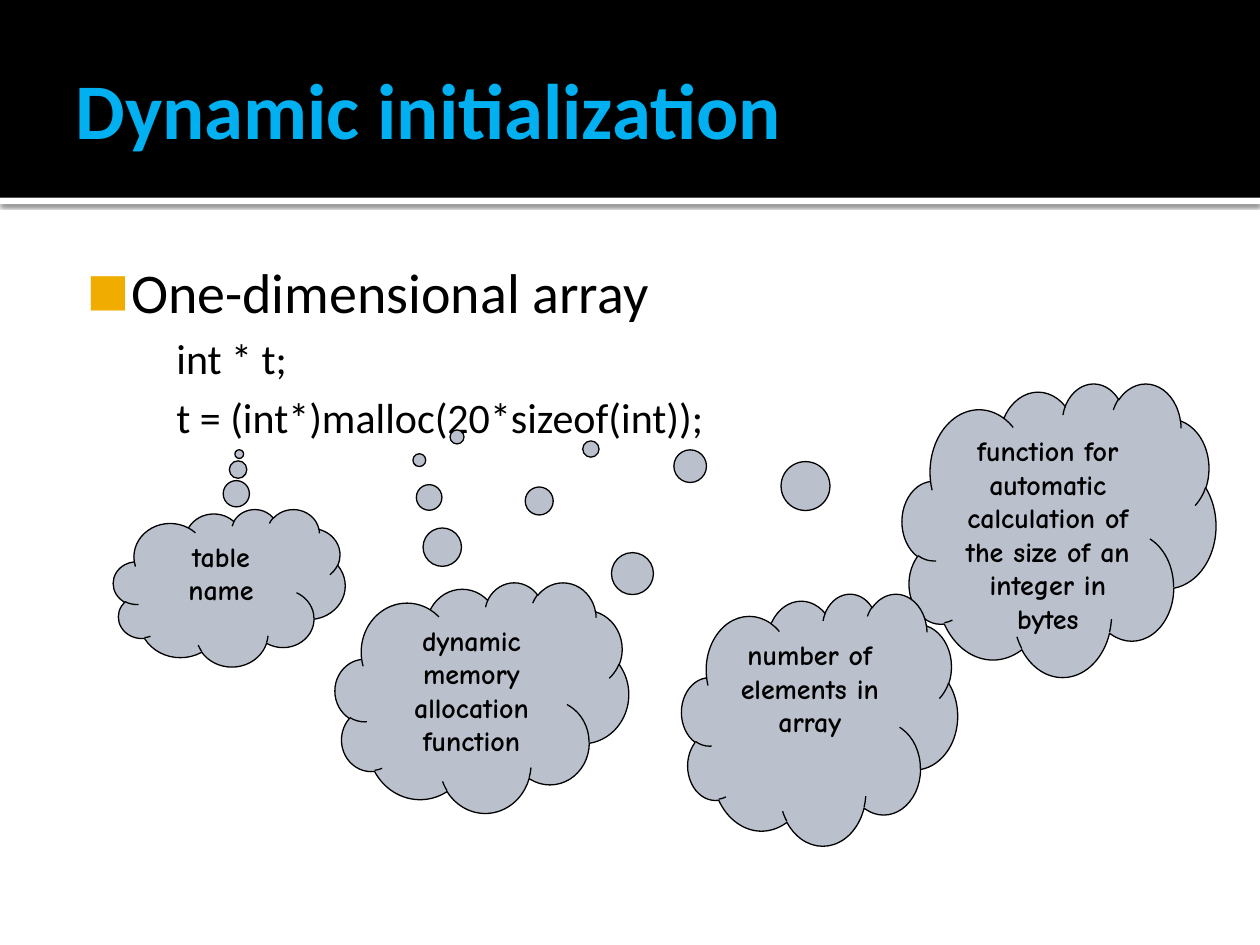
from lxml.etree import SubElement
from pptx import Presentation
from pptx.dml.color import RGBColor
from pptx.enum.shapes import MSO_SHAPE
from pptx.enum.text import MSO_ANCHOR, MSO_AUTO_SIZE, PP_ALIGN
from pptx.oxml import parse_xml
from pptx.oxml.ns import nsdecls, qn
from pptx.util import Inches, Pt

BLACK = RGBColor(0x00, 0x00, 0x00)
WHITE = RGBColor(0xFF, 0xFF, 0xFF)
SKY = RGBColor(0x00, 0xB0, 0xF0)
AMBER = RGBColor(0xF0, 0xAD, 0x00)
CLOUD = RGBColor(0xBA, 0xC0, 0xCC)


def write(p, text, size, font="Calibri", color=BLACK, bold=False, align=PP_ALIGN.LEFT):
    """Put one formatted run into a paragraph."""
    p.alignment = align
    r = p.add_run()
    r.text = text
    r.font.size, r.font.name, r.font.bold = Pt(size), font, bold
    r.font.color.rgb = color


class SlideBuilder:
    body_font = "Calibri"
    note_font = "Comic Neue"

    def __init__(self, prs):
        self.s = prs.slides.add_slide(prs.slide_layouts[1])

    def bar(self, top, height, color, shadow=False):
        """Full-width bar behind the placeholders."""
        sp = self.s.shapes.add_shape(
            MSO_SHAPE.RECTANGLE, 0, Inches(top), Inches(10), Inches(height))
        sp.shadow.inherit = False
        sp.fill.solid()
        sp.fill.fore_color.rgb = color
        sp.line.fill.background()
        if shadow:
            effects = sp._element.spPr.find(qn("a:effectLst"))
            effects.append(parse_xml(
                f'<a:outerShdw {nsdecls("a")} blurRad="{Pt(2.5)}" dist="{Pt(0.8)}" '
                'dir="5400000" algn="t" rotWithShape="0"><a:srgbClr val="000000">'
                '<a:alpha val="60000"/></a:srgbClr></a:outerShdw>'))
        self.s.shapes._spTree.insert(2, sp._element)

    def frame(self, sp, box, insets, anchor):
        """Place a placeholder and return its text frame."""
        sp.left, sp.top, sp.width, sp.height = map(Inches, box)
        tf = sp.text_frame
        tf.auto_size, tf.word_wrap = MSO_AUTO_SIZE.NONE, True
        tf.vertical_anchor = anchor
        (tf.margin_left, tf.margin_top,
         tf.margin_right, tf.margin_bottom) = map(Inches, insets)
        return tf

    def title(self, text, box):
        tf = self.frame(self.s.shapes.title, box, (0.1, 0.05, 0.05, 0.05), MSO_ANCHOR.MIDDLE)
        write(tf.paragraphs[0], text, 45, self.body_font, SKY, bold=True)

    def body(self, heading, code, box):
        """A bulleted heading with code lines below it."""
        tf = self.frame(self.s.placeholders[1], box, (0.06, 0.1, 0.1, 0.05), MSO_ANCHOR.TOP)
        p = tf.paragraphs[0]
        p.space_before = Pt(0)
        write(p, heading, 32, self.body_font)
        self.indent(p, 0.48, -0.35, bullet="■")
        for line in code:
            p = tf.add_paragraph()
            p.level = 1
            p.space_before = Pt(4.8)
            write(p, line, 24, self.body_font)
            self.indent(p, 1.09, -0.25)
            # Code starts at the hanging position, without a bullet

    def indent(self, p, left, first, bullet=None):
        pPr = p._p.get_or_add_pPr()
        pPr.set("marL", str(Inches(left)))
        pPr.set("indent", str(Inches(first)))
        if bullet is None:
            SubElement(pPr, qn("a:buNone"))
            return
        color = SubElement(pPr, qn("a:buClr"))
        SubElement(color, qn("a:srgbClr"), val=str(AMBER))
        SubElement(pPr, qn("a:buSzPct"), val="80000")
        SubElement(pPr, qn("a:buFont"), typeface=self.body_font)
        SubElement(pPr, qn("a:buChar"), char=bullet)

    def cloud(self, text, box, tail):
        """Thought cloud whose bubbles lead to the tail point."""
        sp = self.s.shapes.add_shape(MSO_SHAPE.CLOUD_CALLOUT, *map(Inches, box))
        sp.adjustments[0], sp.adjustments[1] = tail
        sp.shadow.inherit = False
        sp.fill.solid()
        sp.fill.fore_color.rgb = CLOUD
        sp.line.color.rgb = BLACK
        sp.line.width = Pt(0.75)
        tf = sp.text_frame
        tf.word_wrap = True
        tf.vertical_anchor = MSO_ANCHOR.TOP
        write(tf.paragraphs[0], text, 16, self.note_font, bold=True, align=PP_ALIGN.CENTER)


def main():
    prs = Presentation()
    prs.slide_width, prs.slide_height = Inches(10), Inches(7.5)
    slide = SlideBuilder(prs)

    # Header band; each bar goes to the very back
    slide.bar(0, 1.57, BLACK)
    slide.bar(1.57, 0.05, WHITE, shadow=True)

    # Title and code
    slide.title("Dynamic initialization", (0.5, 0.17, 9, 1.37))
    slide.body("One-dimensional array",
               ["int * t;", "t = (int*)malloc(20*sizeof(int));"],
               (0.5, 1.94, 9, 5.06))

    # Clouds explaining the parts of the statement
    clouds = [
        ("table name", (0.9, 4.04, 1.84, 1.25), (0.043, -0.849)),
        ("function for automatic calculation of the size of an integer in bytes",
         (7.16, 3.04, 2.49, 2.33), (-1.492, -0.275)),
        ("dynamic memory allocation function", (2.66, 4.62, 2.33, 1.83), (-0.213, -1.029)),
        ("number of elements in array", (5.41, 4.71, 2.19, 2), (-1.314, -1.121)),
    ]
    for text, box, tail in clouds:
        slide.cloud(text, box, tail)

    prs.save("out.pptx")


if __name__ == "__main__":
    main()
